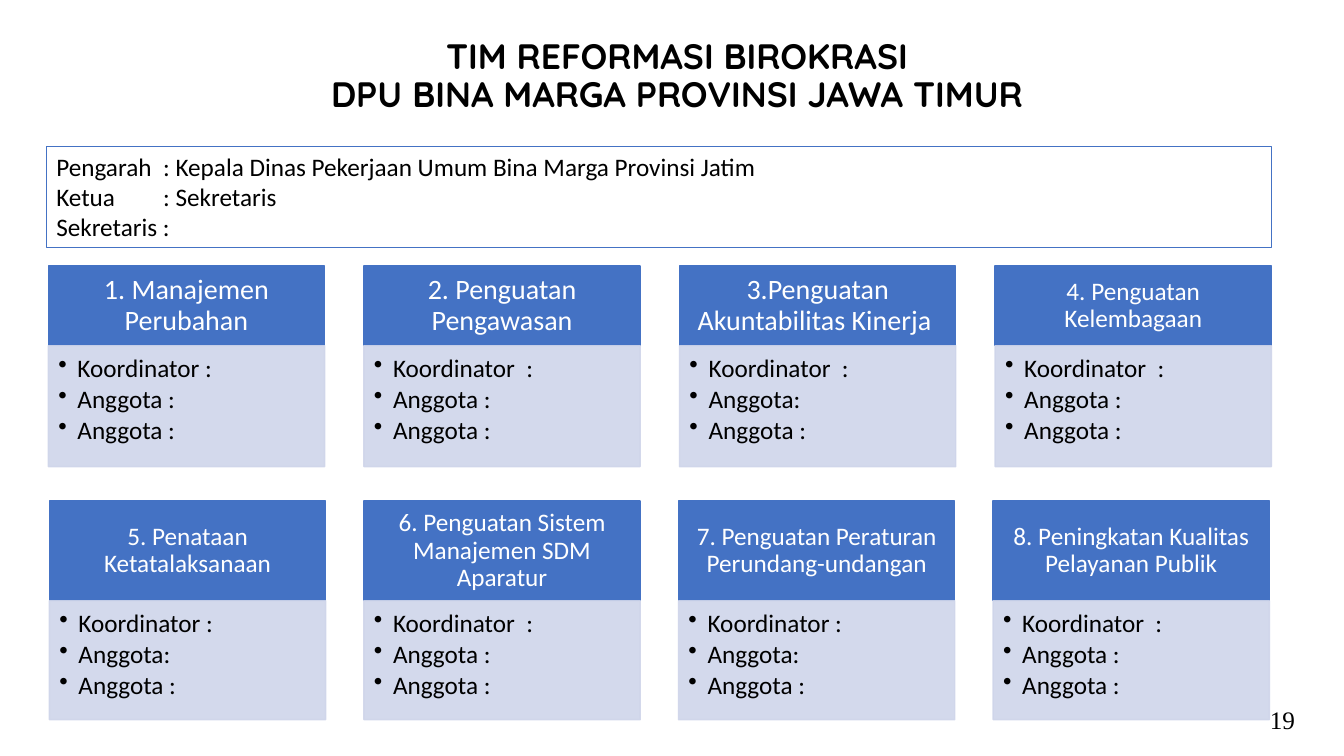
from lxml import etree
from pptx import Presentation
from pptx.dml.color import RGBColor
from pptx.enum.shapes import MSO_SHAPE as Shape
from pptx.enum.text import MSO_ANCHOR as Anchor, PP_ALIGN as Align
from pptx.oxml.ns import qn
from pptx.util import Inches, Pt

# Content
TITLE = "TIM REFORMASI BIROKRASI\vDPU BINA MARGA PROVINSI JAWA TIMUR"
LEADERS = [
    "Pengarah\t: Kepala Dinas Pekerjaan Umum Bina Marga Provinsi Jatim",
    "Ketua\t: Sekretaris",
    "Sekretaris :",
]
PAGE_NUMBER = "19"
MEMBER = "Anggota :"
# Each team: heading, heading size, coordinator line, first member line
TEAM_ROWS = [
    [
        ("1. Manajemen Perubahan", 20, "Koordinator :", MEMBER),
        ("2. Penguatan Pengawasan", 20, "Koordinator  :", MEMBER),
        ("3.Penguatan Akuntabilitas Kinerja ", 20, "Koordinator  :", "Anggota:"),
        ("4. Penguatan Kelembagaan", 18, "Koordinator  :", MEMBER),
    ],
    [
        ("5. Penataan Ketatalaksanaan", 18, "Koordinator :", "Anggota:"),
        ("6. Penguatan Sistem Manajemen SDM Aparatur", 18, "Koordinator  :", MEMBER),
        ("7. Penguatan Peraturan Perundang-undangan", 18, "Koordinator :", "Anggota:"),
        ("8. Peningkatan Kualitas Pelayanan Publik", 18, "Koordinator  :", MEMBER),
    ],
]

# Layout in inches; each row: left, column pitch, top, heading and body heights
ROW_LAYOUTS = [(0.48, 3.13, 2.64, 0.79, 1.2), (0.49, 3.12, 4.97, 0.99, 1.18)]
CARD_WIDTH = 2.74
BULLET_INDENT = 0.19
COLON_TAB = 1.06

BLUE = RGBColor(0x44, 0x72, 0xC4)
PALE_BLUE = RGBColor(0xCF, 0xD5, 0xEA)
WHITE = RGBColor(0xFF, 0xFF, 0xFF)
BLACK = RGBColor(0, 0, 0)

TITLE_FONT = {"name": "Quicksand", "size": Pt(25.2), "bold": True}
BODY_FONT = {"name": "Calibri", "size": Pt(18)}
NUMBER_FONT = {"name": "Times New Roman", "size": Pt(18)}

presentation = Presentation()
presentation.slide_width = Inches(13.33)
presentation.slide_height = Inches(7.5)
slide = presentation.slides.add_slide(presentation.slide_layouts[6])


def set_attributes(target, values):
    for name, value in values.items():
        setattr(target, name, value)


def write(shape, lines, font, color=BLACK, anchor=Anchor.MIDDLE, margins=(0.1, 0.05, 0.1, 0.05), **layout):
    """Fill a shape with one paragraph per line and return the paragraphs."""
    frame = shape.text_frame
    sides = ("margin_left", "margin_top", "margin_right", "margin_bottom")
    set_attributes(frame, {"word_wrap": True, "vertical_anchor": anchor})
    set_attributes(frame, {side: Inches(margin) for side, margin in zip(sides, margins)})
    frame.text = "\n".join(lines)
    for paragraph in frame.paragraphs:
        set_attributes(paragraph, layout)
        set_attributes(paragraph.font, font)
        paragraph.font.color.rgb = color
        for run in paragraph.runs:
            set_attributes(run.font, font)
            run.font.color.rgb = color
    return frame.paragraphs


def add_text(left, top, width, height, text, font, **layout):
    box = slide.shapes.add_textbox(Inches(left), Inches(top), Inches(width), Inches(height))
    write(box, [text], font, alignment=Align.CENTER, **layout)


def add_rectangle(left, top, width, height, line, line_width=1, fill=None):
    shape = slide.shapes.add_shape(
        Shape.RECTANGLE, Inches(left), Inches(top), Inches(width), Inches(height))
    shape.shadow.inherit = False
    if fill is None:
        shape.fill.background()
    else:
        shape.fill.solid()
        shape.fill.fore_color.rgb = fill
    shape.line.color.rgb = line
    shape.line.width = Pt(line_width)
    return shape


def add_bullet(paragraph):
    properties = paragraph._p.get_or_add_pPr()
    properties.set("marL", str(Inches(BULLET_INDENT)))
    properties.set("indent", str(-Inches(BULLET_INDENT)))
    etree.SubElement(properties, qn("a:buChar")).set("char", "•")


def add_tab_stop(paragraph):
    tabs = etree.Element(qn("a:tabLst"))
    etree.SubElement(tabs, qn("a:tab"), pos=str(Inches(COLON_TAB)), algn="l")
    properties = paragraph._p.get_or_add_pPr()
    defaults = properties.find(qn("a:defRPr"))
    if defaults is None:
        properties.append(tabs)
    else:
        defaults.addprevious(tabs)


def add_team(left, top, heading_height, body_height, heading, size, coordinator, member):
    header = add_rectangle(left, top, CARD_WIDTH, heading_height, BLUE, fill=BLUE)
    inset = size * 0.008
    write(header, [heading], {**BODY_FONT, "size": Pt(size)}, WHITE,
          margins=(inset, 0.08, inset, 0.08), alignment=Align.CENTER, line_spacing=0.9)

    body = add_rectangle(left, top + heading_height, CARD_WIDTH, body_height, PALE_BLUE, fill=PALE_BLUE)
    for color in list(body._element.spPr.iter(qn("a:srgbClr"))):
        etree.SubElement(color, qn("a:alpha")).set("val", "90000")
    paragraphs = write(body, [coordinator, member, MEMBER], BODY_FONT, anchor=Anchor.TOP,
                       margins=(0.1, 0.1, 0.14, 0.16), alignment=Align.LEFT,
                       line_spacing=0.9, space_after=Pt(2.7))
    for paragraph in paragraphs:
        properties = paragraph._p.get_or_add_pPr()
        for defaults in properties.findall(qn("a:defRPr")):
            properties.remove(defaults)
        add_bullet(paragraph)


# Title
add_text(1.46, 0.36, 10.51, 0.81, TITLE, TITLE_FONT, line_spacing=0.9)

# Team cards
for (row_left, pitch, top, heading_height, body_height), teams in zip(ROW_LAYOUTS, TEAM_ROWS):
    for column, team in enumerate(teams):
        add_team(row_left + column * pitch, top, heading_height, body_height, *team)

# Leadership box
leaders_box = add_rectangle(0.46, 1.45, 12.15, 1.01, BLUE, line_width=0.75)
for paragraph in write(leaders_box, LEADERS, BODY_FONT, anchor=Anchor.TOP, alignment=Align.LEFT):
    add_tab_stop(paragraph)

# Page number
add_text(12.42, 6.98, 0.6, 0.31, PAGE_NUMBER, NUMBER_FONT)

presentation.save("out.pptx")
